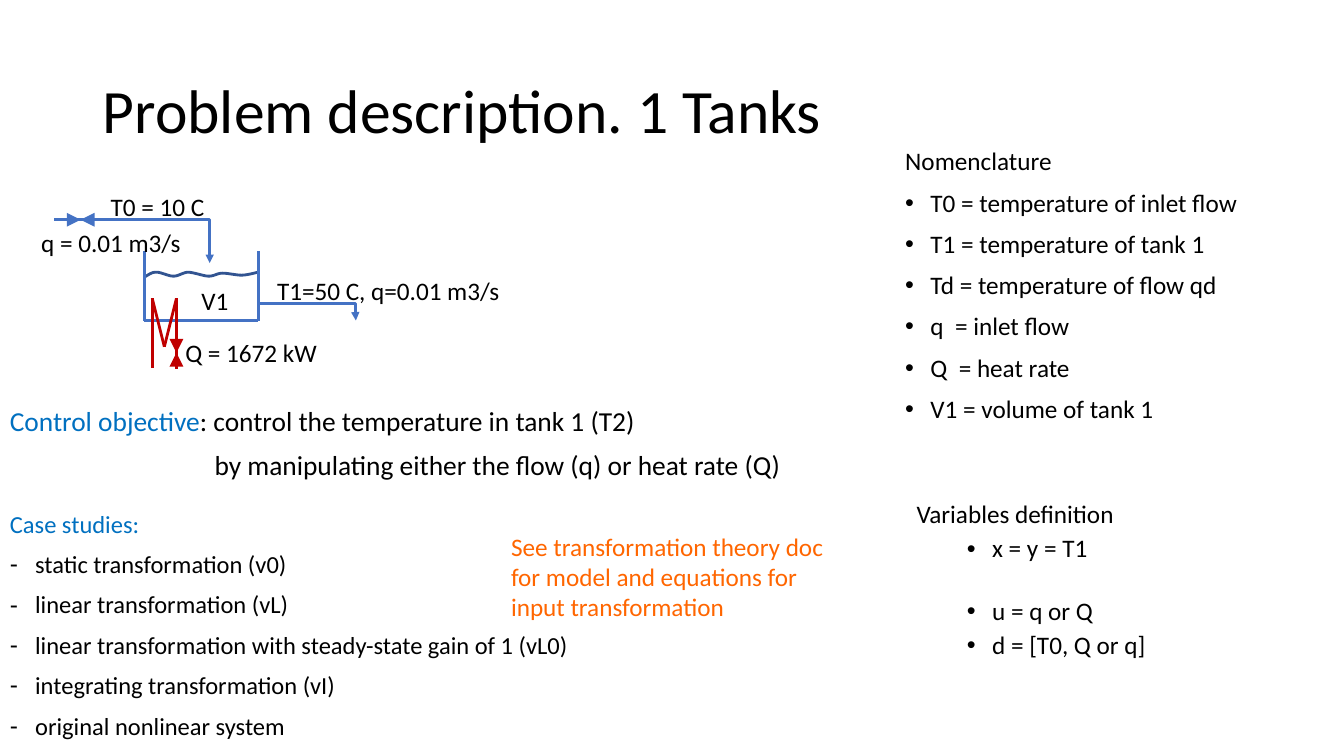
from lxml import etree
from pptx import Presentation
from pptx.dml.color import RGBColor
from pptx.enum.shapes import MSO_CONNECTOR as Connector
from pptx.enum.text import MSO_ANCHOR as Anchor, MSO_AUTO_SIZE as AutoSize, PP_ALIGN as Align
from pptx.oxml.ns import qn
from pptx.util import Inches, Pt

BLACK, BLUE, RED = "000000", "4472C4", "C00000"
WAVE_BLUE, HEADING_BLUE, ORANGE = "325491", "0070C0", "FF6600"


def color(value):
    return RGBColor.from_string(value)


def add_element(parent, tag, **attributes):
    return etree.SubElement(parent, qn(tag), attributes)


def cubic_points(start, segments, steps=8):
    points = [start]
    for first, second, end in segments:
        for step in range(1, steps + 1):
            t = step / steps
            weights = ((1 - t) ** 3, 3 * t * (1 - t) ** 2, 3 * t * t * (1 - t), t ** 3)
            corners = (start, first, second, end)
            points.append(tuple(sum(w * c[axis] for w, c in zip(weights, corners)) for axis in (0, 1)))
        start = end
    return points


class SlideBuilder:
    font = "Calibri"
    size = 18

    def __init__(self, slide):
        self.slide = slide
        self.shapes = slide.shapes

    def group(self):
        return self.shapes.add_group_shape().shapes

    def place(self, shape, left, top, width, height):
        shape.left, shape.top = Inches(left), Inches(top)
        shape.width, shape.height = Inches(width), Inches(height)

    def paragraph(self, frame, runs, first, size=None, line=None, before=0,
                  margin=0, hanging=0, bullet=None, level=0):
        paragraph = frame.paragraphs[0] if first else frame.add_paragraph()
        paragraph.alignment = Align.LEFT
        paragraph.level = level
        paragraph.line_spacing = line
        paragraph.space_before = Pt(0 if first else before)
        properties = paragraph._p.get_or_add_pPr()
        properties.set("marL", str(Inches(margin)))
        properties.set("indent", str(Inches(-hanging)))
        if bullet:
            add_element(properties, "a:buFont", typeface="Arial")
            add_element(properties, "a:buChar", char=bullet)
        else:
            add_element(properties, "a:buNone")
        for text, ink in runs:
            run = paragraph.add_run()
            run.text = text
            run.font.name = self.font
            run.font.size = Pt(size or self.size)
            run.font.color.rgb = color(ink)

    def title(self, text, *box):
        shape = self.shapes.title
        self.place(shape, *box)
        shape.text_frame.vertical_anchor = Anchor.MIDDLE
        shape.text_frame.auto_size = AutoSize.NONE
        self.paragraph(shape.text_frame, [(text, BLACK)], True, size=44, line=0.9)

    def fill_frame(self, shape, paragraphs, size=None):
        frame = shape.text_frame
        frame.word_wrap = True
        frame.auto_size = AutoSize.NONE
        for index, (runs, options) in enumerate(paragraphs):
            self.paragraph(frame, runs, index == 0, size=size, line=0.9, **options)

    def body(self, paragraphs, *box):
        shape = self.slide.placeholders[1]
        self.place(shape, *box)
        self.fill_frame(shape, paragraphs)

    def text_block(self, paragraphs, *box, size=None):
        shape = self.shapes.add_textbox(*map(Inches, box))
        self.fill_frame(shape, paragraphs, size)

    def label(self, lines, *box, ink=BLACK):
        frame = self.shapes.add_textbox(*map(Inches, box)).text_frame
        frame.word_wrap = False
        frame.auto_size = AutoSize.SHAPE_TO_FIT_TEXT
        for index, line in enumerate(lines):
            self.paragraph(frame, [(line, ink)], index == 0)

    def line(self, start, end, ink, width=2, shapes=None, kind=Connector.STRAIGHT,
             head=None, tail=None):
        connector = (shapes or self.shapes).add_connector(kind, *map(Inches, start + end))
        connector.line.color.rgb = color(ink)
        connector.line.width = Pt(width)
        for tag, arrow_size in (("a:headEnd", head), ("a:tailEnd", tail)):
            if arrow_size:
                add_element(connector.line._get_or_add_ln(), tag, type="triangle", w=arrow_size, len=arrow_size)
        add_element(connector._element.spPr, "a:effectLst")
        return connector

    def pipe(self, start, end, preset, bend=None):
        connector = self.line(start, end, BLUE, kind=Connector.ELBOW, tail="med")
        geometry = connector._element.spPr.find(qn("a:prstGeom"))
        geometry.set("prst", preset)
        if bend:
            guides = geometry.find(qn("a:avLst"))
            if guides is None:
                guides = add_element(geometry, "a:avLst")
            add_element(guides, "a:gd", name="adj1", fmla=f"val {round(bend * 100000)}")

    def valve(self, before, middle, after, ink):
        shapes = self.group()
        self.line(before, middle, ink, 0.5, shapes, tail="lg")
        self.line(middle, after, ink, 0.5, shapes, head="lg")

    def curve(self, points, ink, shapes):
        builder = shapes.build_freeform(*map(Inches, points[0]))
        builder.add_line_segments([tuple(map(Inches, point)) for point in points[1:]], close=False)
        shape = builder.convert_to_shape()
        shape.shadow.inherit = False
        shape.fill.background()
        shape.line.color.rgb = color(ink)
        shape.line.width = Pt(2)


def listing(heading, ink, items, bullet):
    options = dict(before=10, margin=0.25, hanging=0.25, bullet=bullet)
    return [([(heading, ink)], {})] + [([(item, BLACK)], options) for item in items]


def draw_process(builder):
    builder.pipe((0.54, 2.18), (2.08, 2.61), "bentConnector2")
    builder.pipe((2.56, 3.01), (3.53, 3.18), "bentConnector3", 0.995)

    tank = builder.group()
    left, right, top, bottom = 1.43, 2.56, 2.49, 3.18
    corners = [(left, top), (left, bottom), (right, bottom), (right, top)]
    for start, end in zip(corners, corners[1:]):
        builder.line(start, end, BLUE, shapes=tank)
    waves = [
        ((1.47, 2.73), (1.5, 2.7), (1.55, 2.7)),
        ((1.6, 2.7), (1.67, 2.74), (1.72, 2.74)),
        ((1.77, 2.74), (1.8, 2.71), (1.86, 2.7)),
        ((1.92, 2.7), (2.02, 2.74), (2.07, 2.74)),
        ((2.13, 2.74), (2.15, 2.71), (2.21, 2.71)),
        ((2.26, 2.71), (2.34, 2.73), (2.4, 2.73)),
        ((2.45, 2.73), (2.56, 2.7), (2.56, 2.7)),
    ]
    builder.curve(cubic_points((left, 2.75), waves), WAVE_BLUE, tank)

    heater = builder.group()
    coil = [(1.75, 3.66), (1.75, 2.96), (1.63, 3.44), (1.51, 2.96), (1.51, 3.65)]
    for start, end in zip(coil, coil[1:]):
        builder.line(start, end, RED, shapes=heater)

    builder.valve((0.72, 2.18), (0.8, 2.18), (0.88, 2.18), BLUE)
    builder.valve((1.75, 3.42), (1.75, 3.5), (1.75, 3.57), RED)

    for text, box in [
        ("V1", (1.9, 2.78, 0.47, 0.4)),
        ("T1=50 C, q=0.01 m3/s", (2.65, 2.68, 2.43, 0.4)),
        ("Q = 1672 kW", (1.74, 3.3, 1.52, 0.4)),
        ("T0 = 10 C", (1, 1.85, 1.14, 0.4)),
        ("q = 0.01 m3/s", (0.31, 2.21, 1.6, 0.4)),
    ]:
        builder.label([text], *box)


def main():
    presentation = Presentation()
    presentation.slide_width, presentation.slide_height = Inches(13.33), Inches(7.5)
    builder = SlideBuilder(presentation.slides.add_slide(presentation.slide_layouts[1]))

    builder.title("Problem description. 1 Tanks", 0.92, 0.4, 11.5, 1.45)
    variables = [("x = y = T1", 5), ("u = q or Q", 25), ("d = [T0, Q or q]", 5)]
    builder.body([([("Variables definition", BLACK)], {})] + [
        ([(text, BLACK)], dict(before=gap, margin=0.75, hanging=0.25, bullet="•", level=1))
        for text, gap in variables
    ], 8.99, 4.93, 2.7, 1.9)

    draw_process(builder)

    builder.text_block(listing("Nomenclature", BLACK, [
        "T0 = temperature of inlet flow", "T1 = temperature of tank 1",
        "Td = temperature of flow qd", "q  = inlet flow", "Q  = heat rate",
        "V1 = volume of tank 1",
    ], "•"), 8.88, 1.43, 4.21, 3.32)
    builder.text_block([
        ([("Control objective", HEADING_BLUE), (": control the temperature in tank 1 (T2)", BLACK)], {}),
        ([("by manipulating either the flow (q) or heat rate (Q)", BLACK)], dict(before=10, margin=2.03)),
    ], 0, 4, 8.62, 0.93, size=19.6)
    builder.text_block(listing("Case studies:", HEADING_BLUE, [
        "static transformation (v0)", "linear transformation (vL)",
        "linear transformation with steady-state gain of 1 (vL0)",
        "integrating transformation (vI)", "original nonlinear system",
    ], "-"), 0, 5.03, 8.62, 2.47, size=17.5)
    builder.label(["See transformation theory doc", "for model and equations for",
                   "input transformation"], 4.97, 5.22, 3.39, 1.01, ink=ORANGE)

    presentation.save("out.pptx")


if __name__ == "__main__":
    main()
